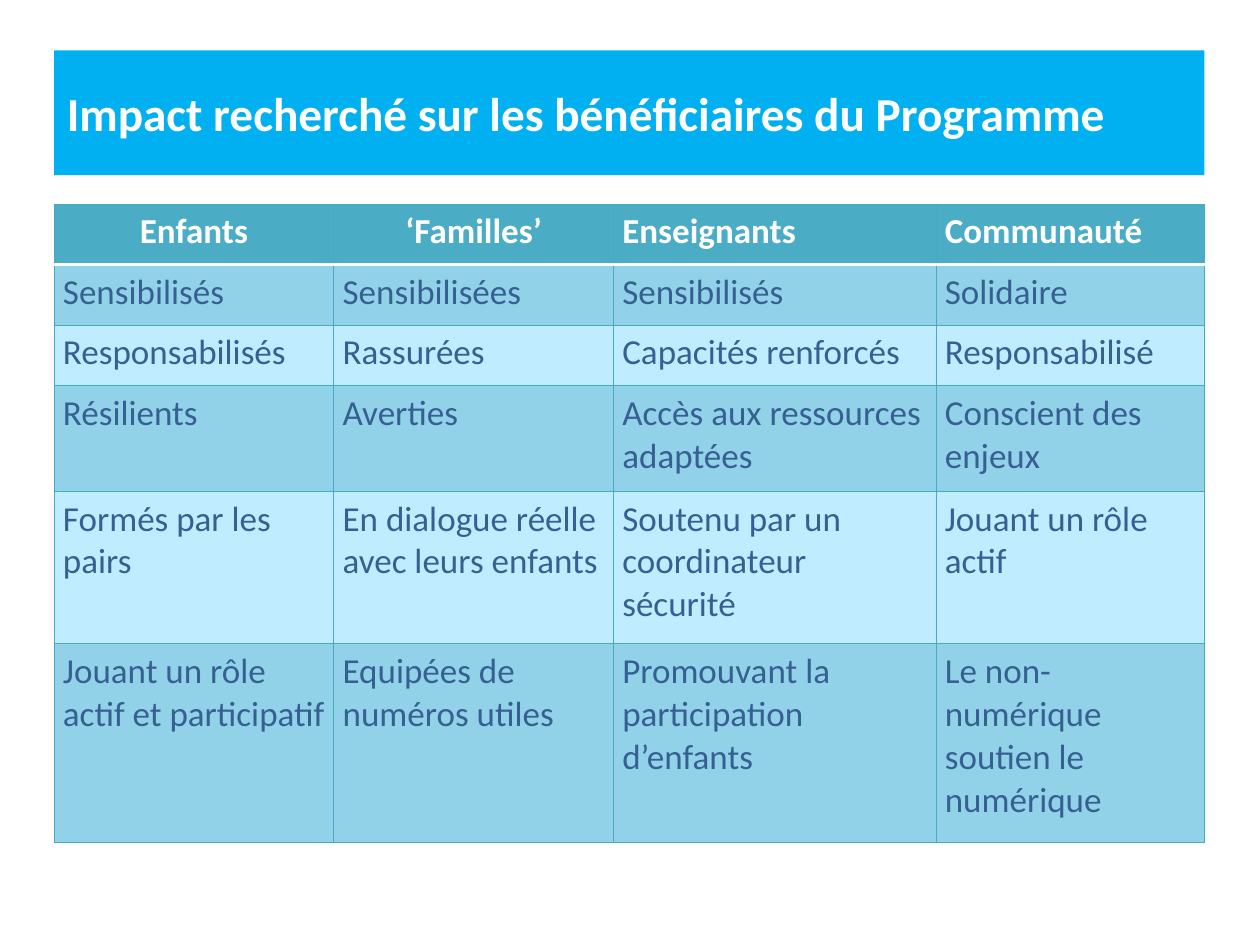
from dataclasses import dataclass

from lxml.etree import SubElement
from pptx import Presentation
from pptx.dml.color import RGBColor
from pptx.enum.text import MSO_ANCHOR, MSO_AUTO_SIZE, PP_ALIGN
from pptx.oxml.ns import qn
from pptx.util import Inches, Pt


@dataclass(frozen=True)
class Theme:
    font: str = "Calibri"
    title_size: int = 27
    table_size: int = 20
    white: str = "FFFFFF"
    banner: str = "00B0F0"
    header: str = "4BACC6"
    dark_band: str = "91D2E8"
    light_band: str = "BFECFF"
    body_text: str = "376092"
    grid: str = "46AAC5"
    grid_width: float = 0.75
    rule_width: float = 2


THEME = Theme()
LEFT, WIDTH = 0.43, 9.13
TITLE_TOP, TITLE_HEIGHT = 0.4, 0.99
TABLE_TOP = 1.62
COLUMN_WIDTHS = (2.22, 2.22, 2.56, 2.13)
ROW_HEIGHTS = (0.48, 0.48, 0.48, 0.84, 1.21, 1.58)
CENTRED_HEADERS = 2

TITLE = "Impact recherché sur les bénéficiaires du Programme"
ROWS = (
    ("Enfants", "‘Familles’", "Enseignants", "Communauté"),
    ("Sensibilisés", "Sensibilisées", "Sensibilisés", "Solidaire"),
    ("Responsabilisés", "Rassurées", "Capacités renforcés", "Responsabilisé"),
    ("Résilients", "Averties", "Accès aux ressources adaptées", "Conscient des enjeux"),
    ("Formés par les pairs", "En dialogue réelle avec leurs enfants",
     "Soutenu par un coordinateur sécurité", "Jouant un rôle actif"),
    ("Jouant un rôle actif et participatif", "Equipées de numéros utiles",
     "Promouvant la participation d’enfants", "Le non-numérique soutien le numérique"),
)


def set_attributes(target, values):
    for name, value in values.items():
        setattr(target, name, value)


def fill_solid(target, color):
    target.fill.solid()
    target.fill.fore_color.rgb = RGBColor.from_string(color)


def write_text(frame, text, size, color, bold, alignment=PP_ALIGN.LEFT):
    para = frame.paragraphs[0]
    para.alignment = alignment
    span = para.add_run()
    span.text = text
    set_attributes(span.font, {"name": THEME.font, "size": Pt(size), "bold": bold})
    span.font.color.rgb = RGBColor.from_string(color)


def draw_borders(cell, row):
    """Outline a cell, with a thick white rule between the header and the body."""
    grid, rule = (THEME.grid, THEME.grid_width), (THEME.white, THEME.rule_width)
    sides = {"L": grid, "R": grid, "T": rule if row == 1 else grid,
             "B": rule if row == 0 else grid}
    properties = cell._tc.get_or_add_tcPr()
    for side, (color, width) in sides.items():
        line = SubElement(properties, qn(f"a:ln{side}"), w=str(Pt(width)))
        SubElement(SubElement(line, qn("a:solidFill")), qn("a:srgbClr"), val=color)


def add_title(page):
    banner = page.shapes.title
    set_attributes(banner, {"left": Inches(LEFT), "top": Inches(TITLE_TOP),
                            "width": Inches(WIDTH), "height": Inches(TITLE_HEIGHT)})
    fill_solid(banner, THEME.banner)
    set_attributes(banner.text_frame, {
        "word_wrap": True, "auto_size": MSO_AUTO_SIZE.NONE,
        "vertical_anchor": MSO_ANCHOR.MIDDLE})
    write_text(banner.text_frame, TITLE, THEME.title_size, THEME.white, True)


def format_cell(cell, text, row, column):
    is_header = row == 0
    set_attributes(cell, {
        "margin_left": Inches(0.07), "margin_right": Inches(0.07),
        "margin_top": Inches(0.05), "margin_bottom": Inches(0.05),
        "vertical_anchor": MSO_ANCHOR.TOP})
    draw_borders(cell, row)
    band = THEME.dark_band if row % 2 else THEME.light_band
    fill_solid(cell, THEME.header if is_header else band)
    centred = is_header and column < CENTRED_HEADERS
    write_text(cell.text_frame, text, THEME.table_size,
               THEME.white if is_header else THEME.body_text, is_header,
               PP_ALIGN.CENTER if centred else PP_ALIGN.LEFT)


def add_impact_table(page):
    table = page.shapes.add_table(
        len(ROWS), len(COLUMN_WIDTHS), Inches(LEFT), Inches(TABLE_TOP),
        Inches(WIDTH), Inches(sum(ROW_HEIGHTS))).table
    table.horz_banding = False
    for column, width in zip(table.columns, COLUMN_WIDTHS):
        column.width = Inches(width)
    for row, height in zip(table.rows, ROW_HEIGHTS):
        row.height = Inches(height)
    for row, texts in enumerate(ROWS):
        for column, text in enumerate(texts):
            format_cell(table.cell(row, column), text, row, column)


def main():
    deck = Presentation()
    set_attributes(deck, {"slide_width": Inches(10), "slide_height": Inches(7.5)})
    page = deck.slides.add_slide(deck.slide_layouts.get_by_name("Title Only"))
    add_title(page)
    add_impact_table(page)
    deck.save("out.pptx")


if __name__ == "__main__":
    main()
